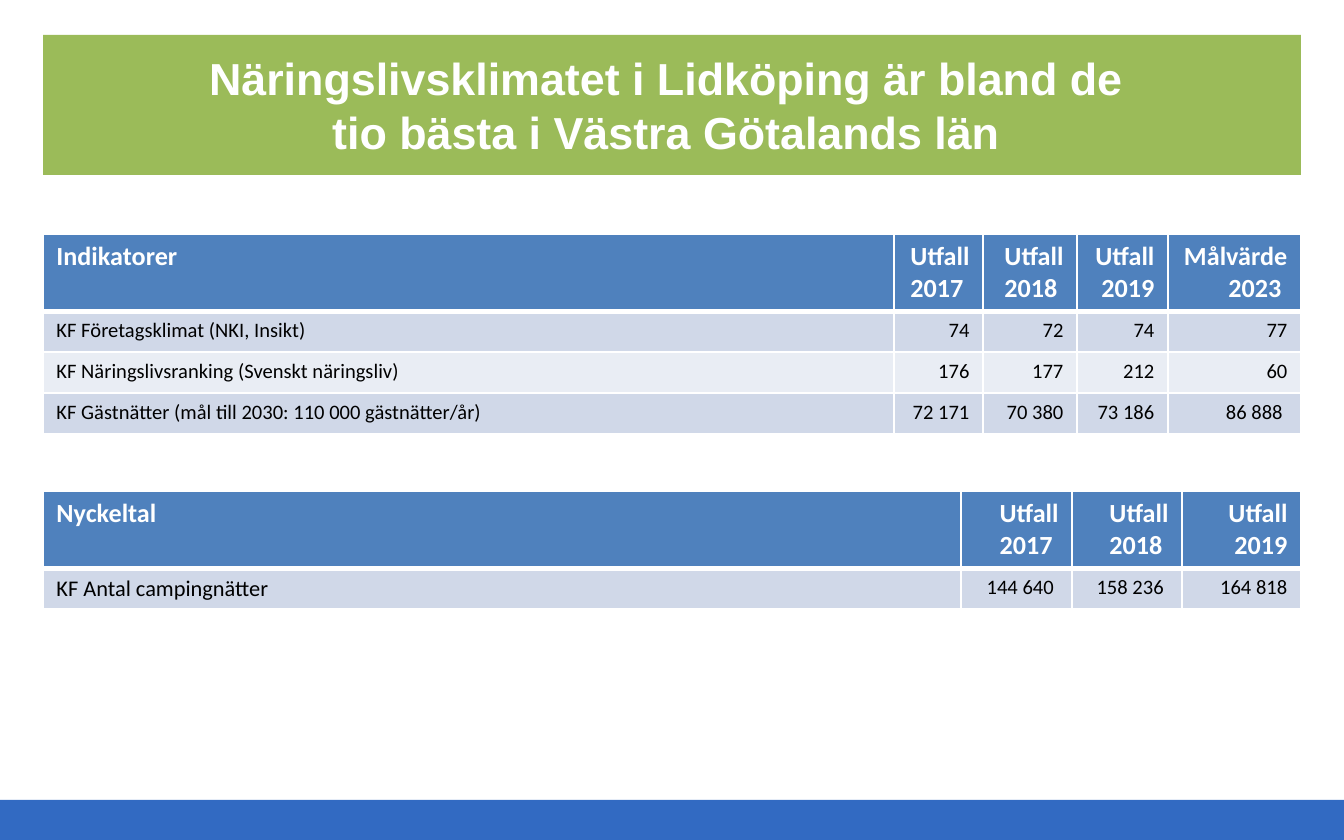
from lxml import etree
from pptx import Presentation
from pptx import util as u
from pptx.dml import color
from pptx.enum import shapes, text
from pptx.oxml import ns

WIDTH, HEIGHT = 1344, 840
SCALE = u.Inches(10) / WIDTH
LEFT = 43
HEADER_HEIGHT, ROW_HEIGHT = 77, 41
COLORS = {
    "white": "FFFFFF",
    "black": "000000",
    "footer": "326AC2",
    "title": "9BBB59",
    "header": "4F81BD",
    "odd": "D0D8E8",
    "even": "E9EDF4",
}

INDICATORS = [
    ["Indikatorer", "Utfall 2017 ", "Utfall 2018 ", "Utfall 2019", "Målvärde 2023 "],
    ["KF Företagsklimat (NKI, Insikt)", "74", "72", "74", "77"],
    ["KF Näringslivsranking (Svenskt näringsliv)", "176", "177", "212", "60"],
    ["KF Gästnätter (mål till 2030: 110 000 gästnätter/år)",
     "72 171", "70 380", "73 186", "86 888 "],
]
KEY_FIGURES = [
    ["Nyckeltal", "Utfall 2017 ", "Utfall 2018 ", "Utfall 2019"],
    ["KF Antal campingnätter", "144 640 ", "158 236 ", "164 818"],
]


def px(length):
    return u.Emu(round(length * SCALE))


def rgb(name):
    return color.RGBColor.from_string(COLORS[name])


def paint(fill, name):
    fill.solid()
    fill.fore_color.rgb = rgb(name)


def set_text(paragraph, content, font_name, size, color_name, bold, alignment):
    paragraph.text = content
    paragraph.alignment = alignment
    font = paragraph.font
    font.name, font.size, font.bold = font_name, u.Pt(size), bold
    font.color.rgb = rgb(color_name)


def add_band(slide, left, top, width, height, fill):
    shape = slide.shapes.add_shape(
        shapes.MSO_SHAPE.RECTANGLE, px(left), px(top), px(width), px(height))
    shape.shadow.inherit = False
    paint(shape.fill, fill)
    shape.line.fill.background()
    return shape


def add_title(slide, content):
    shape = add_band(slide, LEFT, 35, WIDTH - 2 * LEFT, 140, "title")
    frame = shape.text_frame
    frame.word_wrap = True
    frame.vertical_anchor = text.MSO_ANCHOR.MIDDLE
    set_text(frame.paragraphs[0], content, "Arial", 24, "white", True, text.PP_ALIGN.CENTER)


def add_borders(cell, widths):
    properties = cell._tc.get_or_add_tcPr()
    for side, width in widths.items():
        line = etree.SubElement(properties, ns.qn(f"a:ln{side}"), w=str(u.Pt(width)))
        fill = etree.SubElement(line, ns.qn("a:solidFill"))
        etree.SubElement(fill, ns.qn("a:srgbClr"), val=COLORS["white"])


def style_cell(cell, content, row, column, label_size):
    header = row == 0
    if header:
        add_borders(cell, {"L": 1, "R": 1, "T": 1, "B": 3})
        paint(cell.fill, "header")
        size = 14
    else:
        add_borders(cell, {"L": 1, "R": 1, "B": 1})
        paint(cell.fill, "odd" if row % 2 else "even")
        size = 11 if column else label_size
    set_text(cell.text_frame.paragraphs[0], content, "Calibri", size,
             "white" if header else "black", header,
             text.PP_ALIGN.RIGHT if column else text.PP_ALIGN.LEFT)


def add_figures(slide, top, widths, rows, label_size):
    heights = [HEADER_HEIGHT] + [ROW_HEIGHT] * (len(rows) - 1)
    table = slide.shapes.add_table(
        len(rows), len(widths), px(LEFT), px(top), px(sum(widths)), px(sum(heights))).table
    for column, width in zip(table.columns, widths):
        column.width = px(width)
    for row, height in zip(table.rows, heights):
        row.height = px(height)
    for row, contents in enumerate(rows):
        for column, content in enumerate(contents):
            style_cell(table.cell(row, column), content, row, column, label_size)


def main():
    presentation = Presentation()
    presentation.slide_width, presentation.slide_height = px(WIDTH), px(HEIGHT)
    slide = presentation.slides.add_slide(presentation.slide_layouts[6])
    add_band(slide, 0, 800, WIDTH, 40, "footer")
    add_figures(slide, 234, [851, 89, 94, 91, 133], INDICATORS, 11)
    add_figures(slide, 491, [918, 111, 110, 119], KEY_FIGURES, 12)
    add_title(slide, "Näringslivsklimatet i Lidköping är bland de \vtio bästa i Västra Götalands län ")
    presentation.save("out.pptx")


if __name__ == "__main__":
    main()
